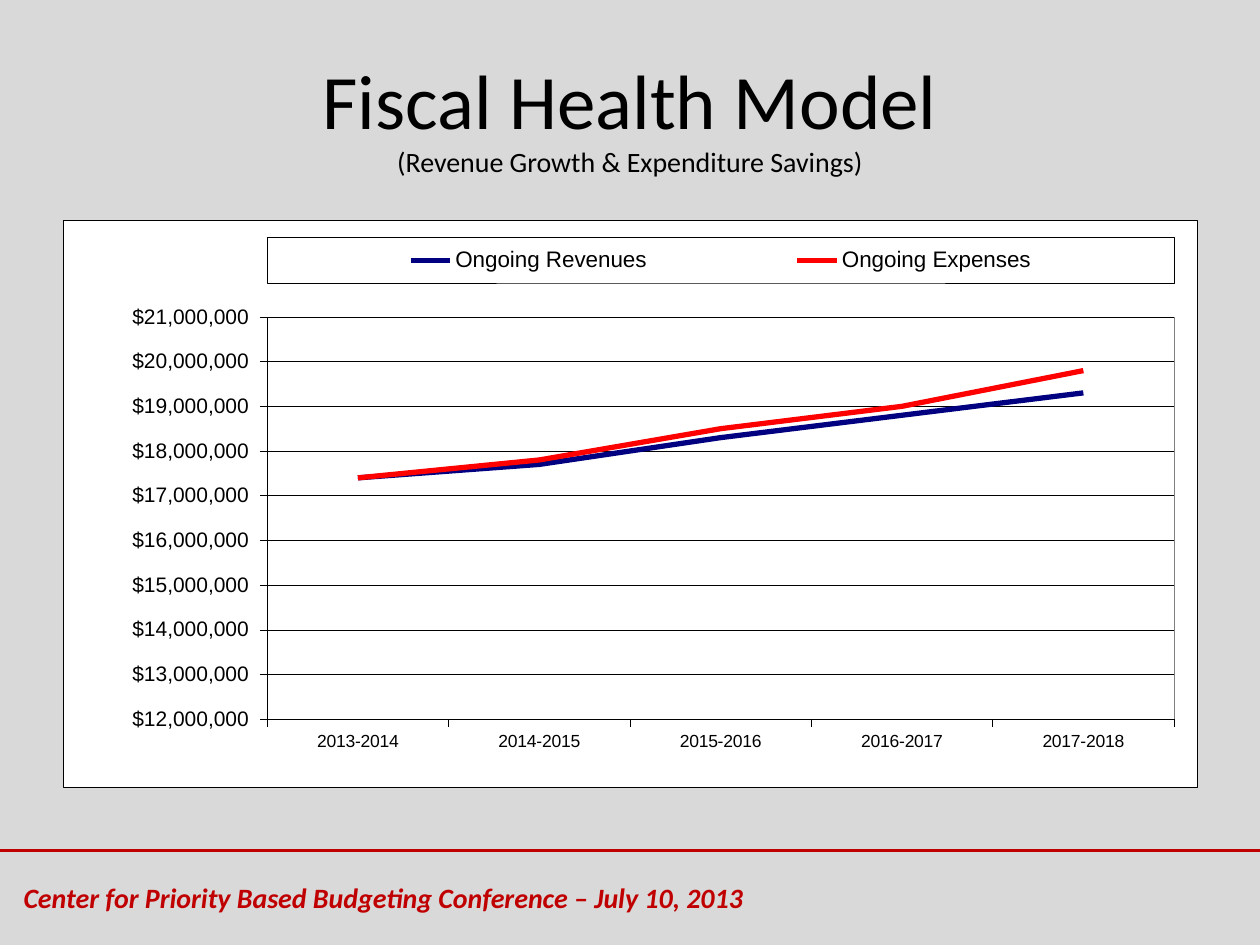
"""Build the fiscal health model slide with its revenue and expense line chart."""
import dataclasses

import lxml.etree
import pptx
import pptx.chart.data
import pptx.dml.color
import pptx.enum.chart
import pptx.enum.dml
import pptx.enum.shapes
import pptx.enum.text
import pptx.oxml
import pptx.oxml.ns
import pptx.util

Inches = pptx.util.Inches
Pt = pptx.util.Pt
qn = pptx.oxml.ns.qn


@dataclasses.dataclass(frozen=True)
class Theme:
    background: str = "D9D9D9"
    accent: str = "C00000"
    ink: str = "000000"
    paper: str = "FFFFFF"
    plot_border: str = "808080"
    heading_font: str = "Calibri"
    chart_font: str = "Arial"
    title_size: float = 44
    small_size: float = 16
    chart_size: float = 9.5
    category_size: float = 10
    value_size: float = 12
    legend_size: float = 12.8
    hairline: float = 0.25
    rule: float = 2
    series_line: float = 3


@dataclasses.dataclass(frozen=True)
class Series:
    name: str
    color: str
    values: tuple[int, ...]


@dataclasses.dataclass(frozen=True)
class Area:
    x: float
    y: float
    w: float
    h: float

    def inches(self) -> tuple:
        return tuple(Inches(v) for v in dataclasses.astuple(self))


THEME = Theme()
YEARS = [f"{year}-{year + 1}" for year in range(2013, 2018)]
SERIES = (
    Series("Ongoing Revenues", "000080", (17_400_000, 17_700_000, 18_300_000, 18_800_000, 19_300_000)),
    Series("Ongoing Expenses", "FF0000", (17_400_000, 17_800_000, 18_500_000, 19_000_000, 19_800_000)),
)
MONEY = '"$"#,##0_);[Red]\\("$"#,##0\\)'


def rgb(color: str) -> pptx.dml.color.RGBColor:
    """Turn a hex string into a colour."""
    return pptx.dml.color.RGBColor.from_string(color)


def style_font(font, size: float, name: str, color: str = THEME.ink, **extra) -> None:
    """Apply size, typeface, colour and any further attributes to a font."""
    for key, value in {"size": Pt(size), "name": name, **extra}.items():
        setattr(font, key, value)
    font.color.rgb = rgb(color)


def style_line(line, color: str, width: float) -> None:
    """Apply a solid colour and width to a line."""
    line.color.rgb = rgb(color)
    line.width = Pt(width)


def box_format(color: str):
    """Return chart shape properties with a paper fill and a thin border."""
    return pptx.oxml.parse_xml(
        f'<c:spPr {pptx.oxml.ns.nsdecls("c", "a")}>'
        f'<a:solidFill><a:srgbClr val="{THEME.paper}"/></a:solidFill>'
        f'<a:ln w="{Pt(THEME.hairline)}"><a:solidFill><a:srgbClr val="{color}"/></a:solidFill></a:ln>'
        "</c:spPr>"
    )


def set_layout(element, area: Area, index: int, inner: bool = False) -> None:
    """Place a chart part by fractions of the chart's size."""
    for old in element.findall(qn("c:layout")):
        element.remove(old)
    settings = {"layoutTarget": "inner"} if inner else {}
    settings |= {"xMode": "edge", "yMode": "edge"} | dataclasses.asdict(area)
    layout = lxml.etree.Element(qn("c:layout"))
    manual = lxml.etree.SubElement(layout, qn("c:manualLayout"))
    for tag, value in settings.items():
        lxml.etree.SubElement(manual, qn(f"c:{tag}")).set("val", str(value))
    element.insert(index, layout)


def add_title(s, title: str, subtitle: str) -> None:
    """Fill the title placeholder with a heading and a smaller second line."""
    sp = s.shapes.title
    sp.left, sp.top, sp.width, sp.height = Area(0.5, 0.25, 9, 1.33).inches()
    tf = sp.text_frame
    tf.auto_size = pptx.enum.text.MSO_AUTO_SIZE.NONE
    tf.vertical_anchor = pptx.enum.text.MSO_ANCHOR.MIDDLE
    p = tf.paragraphs[0]
    p.alignment = pptx.enum.text.PP_ALIGN.CENTER
    r = p.add_run()
    r.text = title
    style_font(r.font, THEME.title_size, THEME.heading_font)
    p.add_line_break()
    r = p.add_run()
    r.text = subtitle
    style_font(r.font, THEME.small_size, THEME.heading_font)


def add_footer(s, text: str) -> None:
    """Draw the footer rule and the conference line under it."""
    rule = s.shapes.add_connector(
        pptx.enum.shapes.MSO_CONNECTOR.STRAIGHT, Inches(0), Inches(6.75), Inches(10), Inches(6.75)
    )
    style_line(rule.line, THEME.accent, THEME.rule)
    lxml.etree.SubElement(rule._element.spPr, qn("a:effectLst"))
    tf = s.shapes.add_textbox(*Area(0, 6.92, 6, 0.4).inches()).text_frame
    tf.word_wrap = True
    tf.vertical_anchor = pptx.enum.text.MSO_ANCHOR.MIDDLE
    p = tf.paragraphs[0]
    p.alignment = pptx.enum.text.PP_ALIGN.RIGHT
    r = p.add_run()
    r.text = text
    style_font(r.font, THEME.small_size, THEME.heading_font, THEME.accent, bold=True, italic=True)


def style_axis(axis, size: float) -> None:
    """Give an axis its ticks, hairline and label font."""
    axis.major_tick_mark = pptx.enum.chart.XL_TICK_MARK.OUTSIDE
    axis.minor_tick_mark = pptx.enum.chart.XL_TICK_MARK.NONE
    style_line(axis.format.line, THEME.ink, THEME.hairline)
    style_font(axis.tick_labels.font, size, THEME.chart_font)


def add_chart(s, area: Area) -> None:
    """Add the line chart of revenues against expenses."""
    data = pptx.chart.data.CategoryChartData(number_format=MONEY)
    data.categories = YEARS
    for item in SERIES:
        data.add_series(item.name, item.values)
    chart = s.shapes.add_chart(pptx.enum.chart.XL_CHART_TYPE.LINE, *area.inches(), data).chart
    chart.has_title = False
    style_font(chart.font, THEME.chart_size, THEME.chart_font)
    chart.plots[0].vary_by_categories = False
    for line, item in zip(chart.plots[0].series, SERIES):
        line.smooth = False
        style_line(line.format.line, item.color, THEME.series_line)

    style_axis(chart.category_axis, THEME.category_size)
    axis = chart.value_axis
    style_axis(axis, THEME.value_size)
    scale = {"minimum_scale": 12_000_000, "maximum_scale": 21_000_000, "major_unit": 1_000_000}
    for key, value in scale.items():
        setattr(axis, key, value)
    axis.has_major_gridlines = True
    style_line(axis.major_gridlines.format.line, THEME.ink, THEME.hairline)
    axis.tick_labels.number_format = MONEY
    axis.tick_labels.number_format_is_linked = False

    chart.has_legend = True
    legend = chart.legend
    legend.position = pptx.enum.chart.XL_LEGEND_POSITION.RIGHT
    legend.include_in_layout = False
    style_font(legend.font, THEME.legend_size, THEME.chart_font)
    set_layout(legend._element, Area(0.18, 0.03, 0.8, 0.08), 1)
    legend._element.find(qn("c:txPr")).addprevious(box_format(THEME.ink))
    plot_area = chart._chartSpace.chart.plotArea
    set_layout(plot_area, Area(0.18, 0.17, 0.8, 0.71), 0, inner=True)
    plot_area.append(box_format(THEME.plot_border))
    chart._chartSpace.chart.addnext(box_format(THEME.ink))


def main() -> None:
    """Build and save the presentation."""
    prs = pptx.Presentation()
    prs.slide_width, prs.slide_height = Inches(10), Inches(7.5)
    s = prs.slides.add_slide(prs.slide_layouts[5])
    s.background.fill.solid()
    s.background.fill.fore_color.rgb = rgb(THEME.background)
    add_footer(s, "Center for Priority Based Budgeting Conference – July 10, 2013")
    add_title(s, "Fiscal Health Model", "(Revenue Growth & Expenditure Savings)")
    add_chart(s, Area(0.5, 1.75, 9, 4.5))
    prs.save("out.pptx")


if __name__ == "__main__":
    main()
